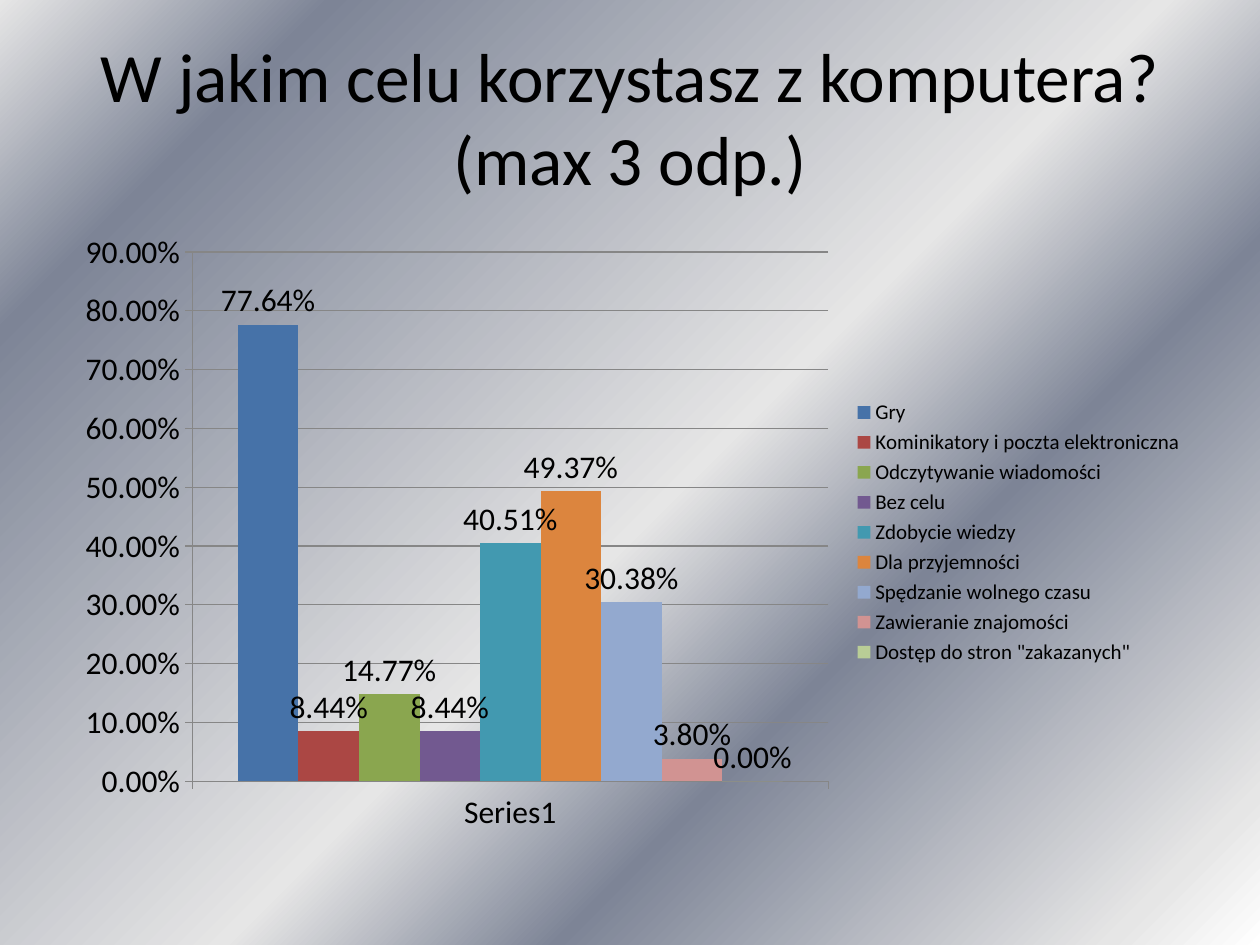
from lxml.etree import SubElement
from pptx import Presentation
from pptx.chart.data import CategoryChartData
from pptx.dml.color import RGBColor
from pptx.enum.chart import XL_CHART_TYPE, XL_LABEL_POSITION, XL_LEGEND_POSITION, XL_TICK_MARK
from pptx.enum.text import MSO_ANCHOR, PP_ALIGN
from pptx.oxml.ns import qn
from pptx.util import Inches, Pt

BLACK = RGBColor(0x00, 0x00, 0x00)
GRID_GRAY = RGBColor(0x86, 0x86, 0x86)
WHITE = RGBColor(0xFF, 0xFF, 0xFF)
SILVER = RGBColor(0xE6, 0xE6, 0xE6)
STEEL = RGBColor(0x7D, 0x84, 0x96)
BLUE = RGBColor(0x46, 0x72, 0xA8)
RED = RGBColor(0xAB, 0x47, 0x44)
GREEN = RGBColor(0x8A, 0xA6, 0x4F)
PURPLE = RGBColor(0x72, 0x59, 0x90)
TEAL = RGBColor(0x42, 0x99, 0xB0)
ORANGE = RGBColor(0xDC, 0x85, 0x3E)
LIGHT_BLUE = RGBColor(0x93, 0xA9, 0xCF)
LIGHT_RED = RGBColor(0xD1, 0x93, 0x92)
LIGHT_GREEN = RGBColor(0xB9, 0xCD, 0x96)

PERCENT = "0.00%"
BACKGROUND_STOPS = [(0, WHITE), (7, SILVER), (32, STEEL), (47, SILVER), (85, STEEL), (100, SILVER)]
ANSWERS = [
    ("Gry", 0.7764, BLUE),
    ("Kominikatory i poczta elektroniczna", 0.0844, RED),
    ("Odczytywanie wiadomości", 0.1477, GREEN),
    ("Bez celu", 0.0844, PURPLE),
    ("Zdobycie wiedzy", 0.4051, TEAL),
    ("Dla przyjemności", 0.4937, ORANGE),
    ("Spędzanie wolnego czasu", 0.3038, LIGHT_BLUE),
    ("Zawieranie znajomości", 0.038, LIGHT_RED),
    ('Dostęp do stron "zakazanych"', 0, LIGHT_GREEN),
]


def format_font(font, size, color=BLACK, name="Calibri"):
    font.size = Pt(size)
    font.name = name
    font.bold = False
    font.color.rgb = color


def write_text(frame, text, *, size, color=BLACK, align=PP_ALIGN.LEFT):
    para = frame.paragraphs[0]
    para.alignment = align
    span = para.add_run()
    span.text = text
    format_font(span.font, size, color)


class SlideBuilder:
    def __init__(self, page, text_size=18, legend_size=12):
        self.page = page
        self.text_size = text_size
        self.legend_size = legend_size

    def background(self, stops, angle):
        fill = self.page.background.fill
        fill.gradient()
        gradient = self.page.background._cSld.find(".//" + qn("a:gradFill"))
        stop_list = gradient.find(qn("a:gsLst"))
        for stop in list(stop_list):
            stop_list.remove(stop)
        for position, color in stops:
            stop = SubElement(stop_list, qn("a:gs"), pos=str(position * 1000))
            SubElement(stop, qn("a:srgbClr"), val=str(color))
        gradient.find(qn("a:lin")).set("ang", str(angle * 60000))

    def title(self, text, left, top, width, height, size):
        box = self.page.shapes.add_textbox(Inches(left), Inches(top), Inches(width), Inches(height))
        frame = box.text_frame
        frame.word_wrap = True
        frame.vertical_anchor = MSO_ANCHOR.MIDDLE
        write_text(frame, text, size=size, align=PP_ALIGN.CENTER)

    def column_chart(self, category, answers, left, top, width, height):
        data = CategoryChartData(number_format=PERCENT)
        data.categories = [category]
        for name, value, _ in answers:
            data.add_series(name, [value])
        chart = self.page.shapes.add_chart(
            XL_CHART_TYPE.COLUMN_CLUSTERED,
            Inches(left), Inches(top), Inches(width), Inches(height), data,
        ).chart
        format_font(chart.font, self.text_size)
        chart.has_title = False
        chart.has_legend = True
        chart.legend.position = XL_LEGEND_POSITION.RIGHT
        chart.legend.include_in_layout = False
        format_font(chart.legend.font, self.legend_size)
        self.axes(chart)
        self.columns(chart.plots[0], answers)

    def axes(self, chart):
        for axis in (chart.category_axis, chart.value_axis):
            axis.major_tick_mark = XL_TICK_MARK.OUTSIDE
            axis.format.line.color.rgb = GRID_GRAY
        value_axis = chart.value_axis
        value_axis.minimum_scale = 0
        value_axis.maximum_scale = 0.9
        value_axis.major_unit = 0.1
        value_axis.has_major_gridlines = True
        value_axis.major_gridlines.format.line.color.rgb = GRID_GRAY
        value_axis.tick_labels.number_format = PERCENT
        value_axis.tick_labels.number_format_is_linked = False

    def columns(self, plot, answers):
        plot.gap_width = 150
        plot.vary_by_categories = False
        for series, (_, _, color) in zip(plot.series, answers):
            series.format.fill.solid()
            series.format.fill.fore_color.rgb = color
            labels = series.data_labels
            labels.show_value = True
            labels.position = XL_LABEL_POSITION.OUTSIDE_END
            labels.number_format = PERCENT
            labels.number_format_is_linked = False
            format_font(labels.font, self.text_size)


def main():
    deck = Presentation()
    deck.slide_width = Inches(10)
    deck.slide_height = Inches(7.5)
    builder = SlideBuilder(deck.slides.add_slide(deck.slide_layouts[6]))
    builder.background(BACKGROUND_STOPS, 225)
    builder.title("W jakim celu korzystasz z komputera? (max 3 odp.)", 0.5, 0.3, 9, 1.25, 39.6)
    builder.column_chart("Series1", ANSWERS, 0.5, 1.75, 9, 4.95)
    deck.save("out.pptx")


if __name__ == "__main__":
    main()
